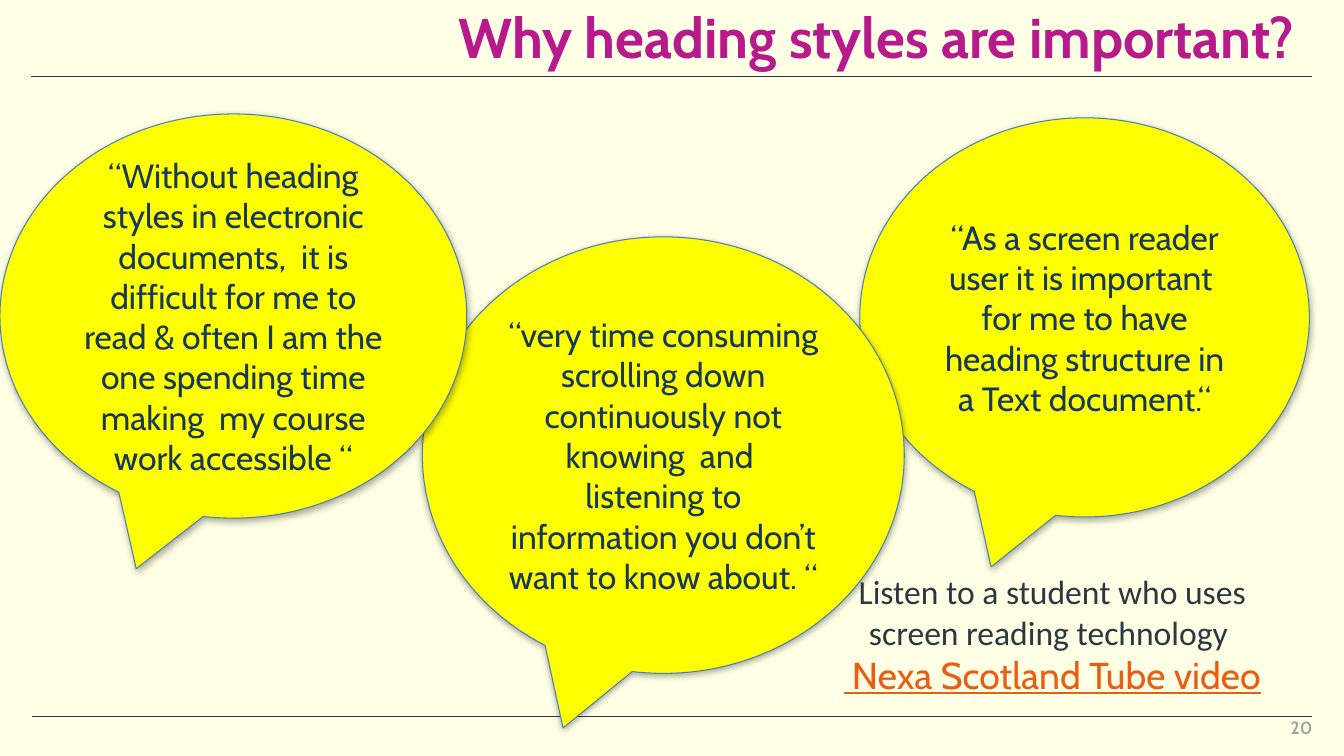
from dataclasses import dataclass

from lxml.etree import SubElement
from pptx import Presentation
from pptx.dml.color import RGBColor
from pptx.enum.shapes import MSO_CONNECTOR, MSO_SHAPE
from pptx.enum.text import MSO_ANCHOR, MSO_AUTO_SIZE, PP_ALIGN
from pptx.oxml.ns import qn
from pptx.shapes.autoshape import Shape
from pptx.slide import Slide
from pptx.text.text import TextFrame
from pptx.util import Pt

CREAM = RGBColor(0xFF, 0xFF, 0xE5)
SLATE = RGBColor(0x2C, 0x38, 0x41)
PINK = RGBColor(0xB7, 0x1A, 0x8B)
YELLOW = RGBColor(0xFF, 0xFF, 0x00)
BLUE = RGBColor(0x4A, 0x7E, 0xBB)
NAVY = RGBColor(0x17, 0x37, 0x5E)
ORANGE = RGBColor(0xE8, 0x5E, 0x12)
GREY = RGBColor(0x9B, 0xA7, 0xA8)


@dataclass
class Box:
    left: float
    top: float
    width: float
    height: float

    def points(self) -> tuple[Pt, Pt, Pt, Pt]:
        return Pt(self.left), Pt(self.top), Pt(self.width), Pt(self.height)


@dataclass
class Style:
    size: float
    color: RGBColor
    align: PP_ALIGN = PP_ALIGN.CENTER
    face: str = "Cabin"
    bold: bool = False
    under: bool = False


@dataclass
class Quote:
    box: Box
    text: str


TITLE = Style(40, PINK, PP_ALIGN.RIGHT, bold=True)
SPEECH = Style(24, NAVY)
PROMPT = Style(24, SLATE, face="Calibri")
VIDEO = Style(26.7, ORANGE, under=True)
NUMBER = Style(12.7, GREY, PP_ALIGN.RIGHT, bold=True)

READER = Quote(
    Box(614.2, 84.2, 321.1, 285.1),
    "“As a screen reader user it is important  for me to have "
    "heading structure in a Text document.“",
)
SCROLL = Quote(
    Box(301.7, 169.2, 344.2, 311.8),
    "“very time consuming scrolling down continuously not knowing  and  "
    "listening to information you don’t want to know about. “",
)
COURSE = Quote(
    Box(0, 81.4, 333.4, 288.7),
    "“Without heading styles in electronic documents,  it is difficult for me "
    "to read & often I am the one spending time making  my course work "
    "accessible “",
)


def write(frame: TextFrame, text: str, *styles: Style) -> None:
    """Fill the frame, with one style for each paragraph."""
    frame.word_wrap = True
    frame.text = text
    for para, style in zip(frame.paragraphs, styles):
        para.alignment = style.align
        for run in para.runs:
            font = run.font
            font.name = style.face
            font.size = Pt(style.size)
            font.bold = style.bold
            font.underline = style.under
            font.color.rgb = style.color


def add_text(slide: Slide, box: Box, text: str, *styles: Style) -> TextFrame:
    frame = slide.shapes.add_textbox(*box.points()).text_frame
    write(frame, text, *styles)
    return frame


def trim(frame: TextFrame) -> None:
    """Take away the inner margins."""
    frame.margin_left = frame.margin_right = 0
    frame.margin_top = frame.margin_bottom = 0


def add_rule(slide: Slide, left: float, top: float) -> None:
    rule = slide.shapes.add_connector(
        MSO_CONNECTOR.STRAIGHT, Pt(left), Pt(top), Pt(937.4), Pt(top)
    )
    rule.line.color.rgb = SLATE
    rule.line.width = Pt(0.5)
    SubElement(rule._element.spPr, qn("a:effectLst"))


def add_shade(shape: Shape) -> None:
    """Cast a soft shadow straight down."""
    shape.shadow.inherit = False
    effects = shape._element.spPr.find(qn("a:effectLst"))
    shade = SubElement(
        effects, qn("a:outerShdw"), blurRad=str(Pt(5)), dist=str(Pt(1.8)),
        dir="5400000", rotWithShape="0",
    )
    color = SubElement(shade, qn("a:srgbClr"), val="000000")
    SubElement(color, qn("a:alpha"), val="35000")


def add_quote(slide: Slide, quote: Quote) -> None:
    shape = slide.shapes.add_shape(
        MSO_SHAPE.OVAL_CALLOUT, *quote.box.points()
    )
    shape.adjustments[0] = -0.208
    shape.adjustments[1] = 0.625
    shape.fill.solid()
    shape.fill.fore_color.rgb = YELLOW
    shape.line.color.rgb = BLUE
    shape.line.width = Pt(0.75)
    add_shade(shape)
    shape.text_frame.vertical_anchor = MSO_ANCHOR.MIDDLE
    write(shape.text_frame, quote.text, SPEECH)


def main() -> None:
    deck = Presentation()
    deck.slide_width, deck.slide_height = Pt(960), Pt(540)
    slide = deck.slides.add_slide(deck.slide_layouts[6])
    slide.background.fill.solid()
    slide.background.fill.fore_color.rgb = CREAM

    # Rules and title
    add_rule(slide, 22.3, 54.7)
    add_rule(slide, 23, 511.9)
    title = add_text(
        slide, Box(276.5, -5.8, 648, 56.2),
        "Why heading styles are important?", TITLE,
    )
    trim(title)
    title.vertical_anchor = MSO_ANCHOR.BOTTOM
    title.paragraphs[0].line_spacing = 0.9

    # Quotes, with the video prompt between them in depth
    add_quote(slide, READER)
    add_quote(slide, SCROLL)
    prompt = add_text(
        slide, Box(578.9, 404.6, 345.6, 97.9),
        "Listen to a student who uses screen reading technology \n"
        " Nexa Scotland Tube video",
        PROMPT, VIDEO,
    )
    prompt.auto_size = MSO_AUTO_SIZE.SHAPE_TO_FIT_TEXT
    add_quote(slide, COURSE)

    # Slide number
    trim(add_text(slide, Box(861.8, 511.9, 75.6, 17.3), "20", NUMBER))

    deck.save("out.pptx")


if __name__ == "__main__":
    main()
